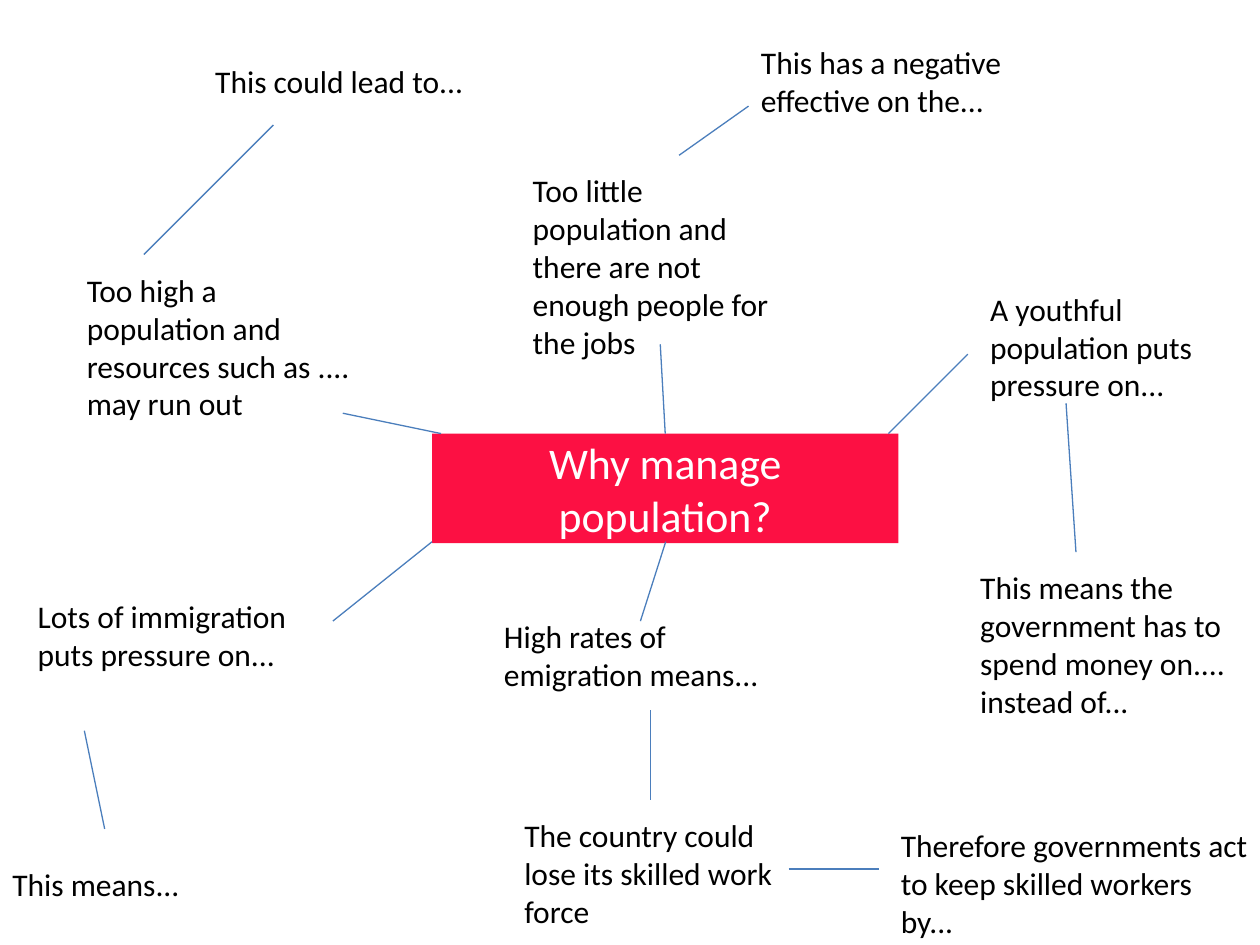
from pptx import Presentation
from pptx.dml.color import RGBColor
from pptx.enum.shapes import MSO_CONNECTOR, MSO_SHAPE
from pptx.enum.text import MSO_ANCHOR, MSO_AUTO_SIZE, PP_ALIGN
from pptx.oxml.ns import qn
from pptx.util import Cm, Pt
from lxml.etree import SubElement

RED = RGBColor(0xFC, 0x10, 0x43)
BLUE = RGBColor(0x4B, 0x7E, 0xBC)
BLACK = RGBColor(0, 0, 0)
WHITE = RGBColor(0xFF, 0xFF, 0xFF)
FONT = "Calibri"

# Central question: left, top, width, height in cm
QUESTION_BOX = (8.71, 8.74, 9.4, 2.21)

# Each branch has an origin in cm; its notes (text, left, top, width, height)
# and links (x1, y1, x2, y2) are measured from that origin.
BRANCHES = [
    {  # Overpopulation
        "origin": (1.5, 1.12),
        "notes": [
            ("Too high a population and resources such as .... may run out",
             0, 4.22, 5.99, 3.33),
            ("This could lead to...", 2.59, 0, 7.01, 1.02),
        ],
        "links": [(7.39, 7.62, 5.41, 7.21), (1.4, 4.01, 4.01, 1.4)],
    },
    {  # Underpopulation
        "origin": (10.49, 0.74),
        "notes": [
            ("Too little population and there are not enough people for the jobs",
             0, 2.59, 5.41, 4.11),
            ("This has a negative effective on the...", 4.6, 0, 5.99, 2.57),
        ],
        "links": [(2.92, 8, 2.82, 6.2), (3.2, 2.39, 4.6, 1.4)],
    },
    {  # Youthful population
        "origin": (17.91, 5.72),
        "notes": [
            ("A youthful population puts pressure on...", 1.8, 0, 5.69, 2.57),
            ("This means the government has to spend money on.... instead of...",
             1.6, 5.61, 5.89, 3.33),
        ],
        "links": [(0, 3.02, 1.6, 1.42), (3.58, 2.41, 3.78, 5.41)],
    },
    {  # Immigration
        "origin": (0, 10.92),
        "notes": [
            ("Lots of immigration puts pressure on...", 0.51, 0.99, 5.79, 2.57),
            ("This means...", 0, 6.4, 5.31, 1.02),
        ],
        "links": [(8.71, 0, 6.71, 1.6), (1.7, 3.81, 2.11, 5.79)],
    },
    {  # Emigration
        "origin": (9.91, 10.92),
        "notes": [
            ("High rates of emigration means...", 0, 1.4, 6.2, 1.8),
            ("The country could lose its skilled work force",
             0.41, 5.41, 5.99, 2.57),
            ("Therefore governments act to keep skilled workers by...",
             8, 5.61, 7.49, 2.57),
        ],
        "links": [(3.51, 0, 3, 1.6), (3.2, 3.4, 3.2, 5.21),
                  (5.99, 6.6, 7.8, 6.6)],
    },
]


def add_text(frame, text, size, color, align):
    frame.word_wrap = True
    paragraph = frame.paragraphs[0]
    paragraph.alignment = align
    run = paragraph.add_run()
    run.text = text
    run.font.name = FONT
    run.font.size = Pt(size)
    run.font.color.rgb = color


def add_link(slide, x1, y1, x2, y2):
    link = slide.shapes.add_connector(
        MSO_CONNECTOR.STRAIGHT, Cm(x1), Cm(y1), Cm(x2), Cm(y2))
    link.line.color.rgb = BLUE
    link.line.width = Pt(0.75)
    SubElement(link.element.spPr, qn("a:effectLst"))


def add_note(slide, text, left, top, width, height):
    note = slide.shapes.add_textbox(Cm(left), Cm(top), Cm(width), Cm(height))
    add_text(note.text_frame, text, 18, BLACK, PP_ALIGN.LEFT)
    note.text_frame.auto_size = MSO_AUTO_SIZE.SHAPE_TO_FIT_TEXT


def add_question(slide, box):
    question = slide.shapes.add_shape(
        MSO_SHAPE.RECTANGLE, *(Cm(length) for length in box))
    question.shadow.inherit = False
    question.fill.solid()
    question.fill.fore_color.rgb = RED
    question.line.fill.background()
    question.text_frame.vertical_anchor = MSO_ANCHOR.MIDDLE
    add_text(question.text_frame, "Why manage population?", 25, WHITE,
             PP_ALIGN.CENTER)


def add_branch(slide, origin, notes, links):
    left, top = origin
    for x1, y1, x2, y2 in links:
        add_link(slide, left + x1, top + y1, left + x2, top + y2)
    for text, dx, dy, width, height in notes:
        add_note(slide, text, left + dx, top + dy, width, height)


def main():
    deck = Presentation()
    deck.slide_width, deck.slide_height = Cm(25.4), Cm(19.05)
    slide = deck.slides.add_slide(deck.slide_layouts[6])
    add_question(slide, QUESTION_BOX)
    for branch in BRANCHES:
        add_branch(slide, **branch)
    deck.save("out.pptx")


if __name__ == "__main__":
    main()
